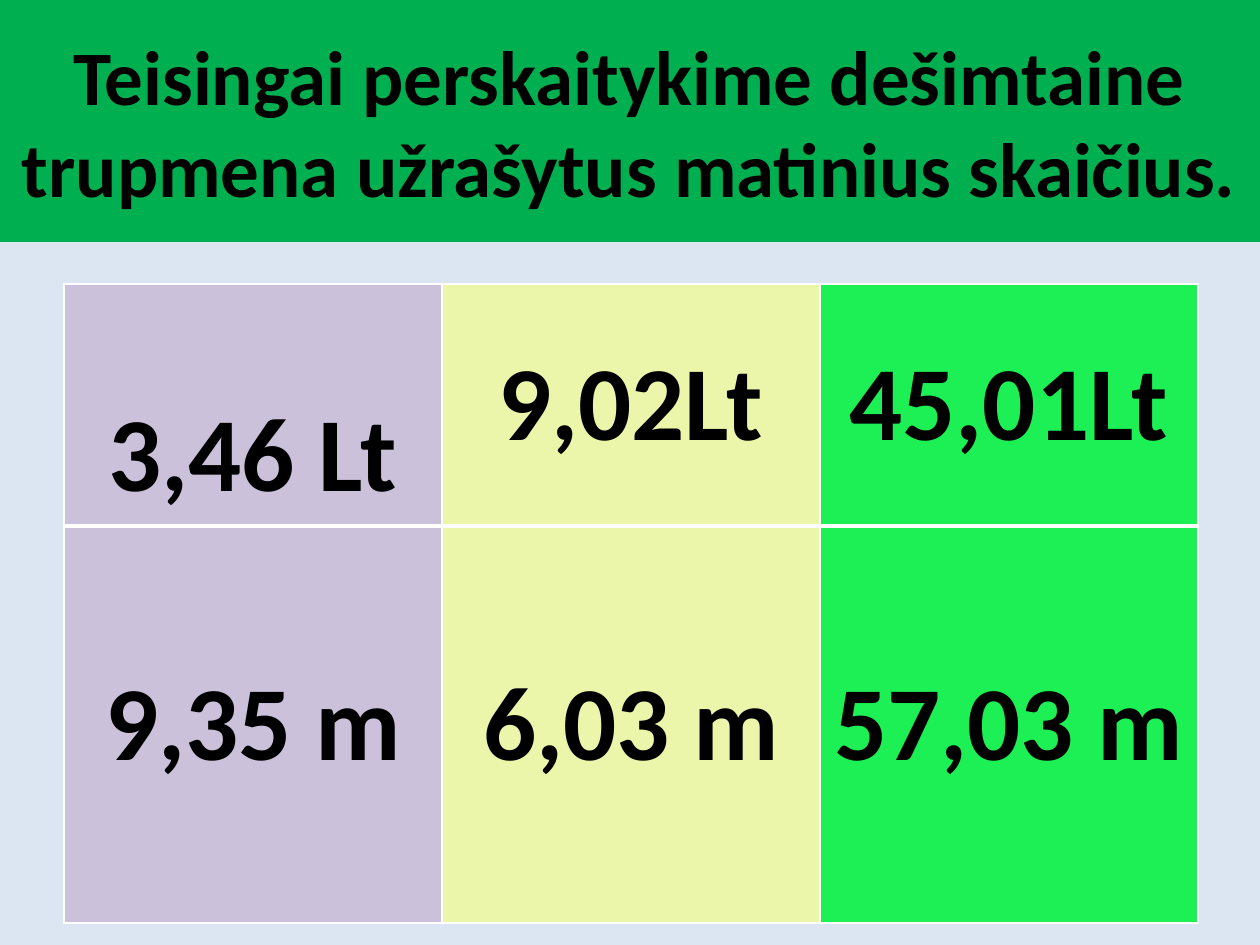
import pptx
import pptx.util
import pptx.dml.color
import pptx.enum.text
import lxml.etree

TITLE = "Teisingai perskaitykime dešimtaine trupmena užrašytus matinius skaičius."
ROWS = [
    ["3,46 Lt", "9,02Lt", "45,01Lt"],
    ["9,35 m", "6,03 m", "57,03 m"],
]
COLUMN_FILLS = ["CCC1DA", "EBF6AA", "1CF054"]
ROW_HEIGHTS = [242, 397]
COLUMN_WIDTH = 378
TABLE_LEFT, TABLE_TOP = 64, 284
PAGE_WIDTH, PAGE_HEIGHT, TITLE_HEIGHT = 1260, 945, 242
MIDDLE = pptx.enum.text.MSO_ANCHOR.MIDDLE
BOTTOM = pptx.enum.text.MSO_ANCHOR.BOTTOM


def px(length):
    return pptx.util.Emu(round(length * 914400 / 126))


def paint(fill, color):
    fill.solid()
    fill.fore_color.rgb = pptx.dml.color.RGBColor.from_string(color)


def write(frame, text, size):
    frame.text = text
    para = frame.paragraphs[0]
    para.alignment = pptx.enum.text.PP_ALIGN.CENTER
    font = para.runs[0].font
    font.name = "Calibri"
    font.size = pptx.util.Pt(size)
    font.bold = True
    paint(font.fill, "000000")


def add_borders(cell, bottom_width):
    properties = cell._tc.get_or_add_tcPr()
    namespace = pptx.oxml.ns.qn("a:tcPr").removesuffix("tcPr")
    widths = {"lnL": 1, "lnR": 1, "lnT": 1, "lnB": bottom_width}
    for position, (side, width) in enumerate(widths.items()):
        line = lxml.etree.Element(namespace + side, w=str(pptx.util.Pt(width)))
        solid = lxml.etree.SubElement(line, namespace + "solidFill")
        lxml.etree.SubElement(solid, namespace + "srgbClr", val="FFFFFF")
        properties.insert(position, line)


deck = pptx.Presentation()
deck.slide_width, deck.slide_height = px(PAGE_WIDTH), px(PAGE_HEIGHT)
page = deck.slides.add_slide(deck.slide_layouts[5])
paint(page.background.fill, "DCE6F2")

title = page.shapes.title
title.left, title.top = px(0), px(0)
title.width, title.height = px(PAGE_WIDTH), px(TITLE_HEIGHT)
paint(title.fill, "00B050")
write(title.text_frame, TITLE, 44)
title.text_frame.vertical_anchor = MIDDLE
title.text_frame.auto_size = pptx.enum.text.MSO_AUTO_SIZE.NONE

table = page.shapes.add_table(
    len(ROWS), len(COLUMN_FILLS), px(TABLE_LEFT), px(TABLE_TOP),
    px(COLUMN_WIDTH * len(COLUMN_FILLS)), px(sum(ROW_HEIGHTS)),
).table
for column in table.columns:
    column.width = px(COLUMN_WIDTH)
for row_index, (values, height) in enumerate(zip(ROWS, ROW_HEIGHTS)):
    table.rows[row_index].height = px(height)
    for column_index, (value, color) in enumerate(zip(values, COLUMN_FILLS)):
        cell = table.cell(row_index, column_index)
        write(cell.text_frame, value, 60)
        cell.vertical_anchor = BOTTOM if row_index == column_index == 0 else MIDDLE
        paint(cell.fill, color)
        add_borders(cell, 3 if row_index == 0 else 1)
        if row_index == 1:
            top_line = cell._tc.tcPr.find(pptx.oxml.ns.qn("a:lnT"))
            top_line.set("w", str(pptx.util.Pt(3)))

deck.save("out.pptx")
